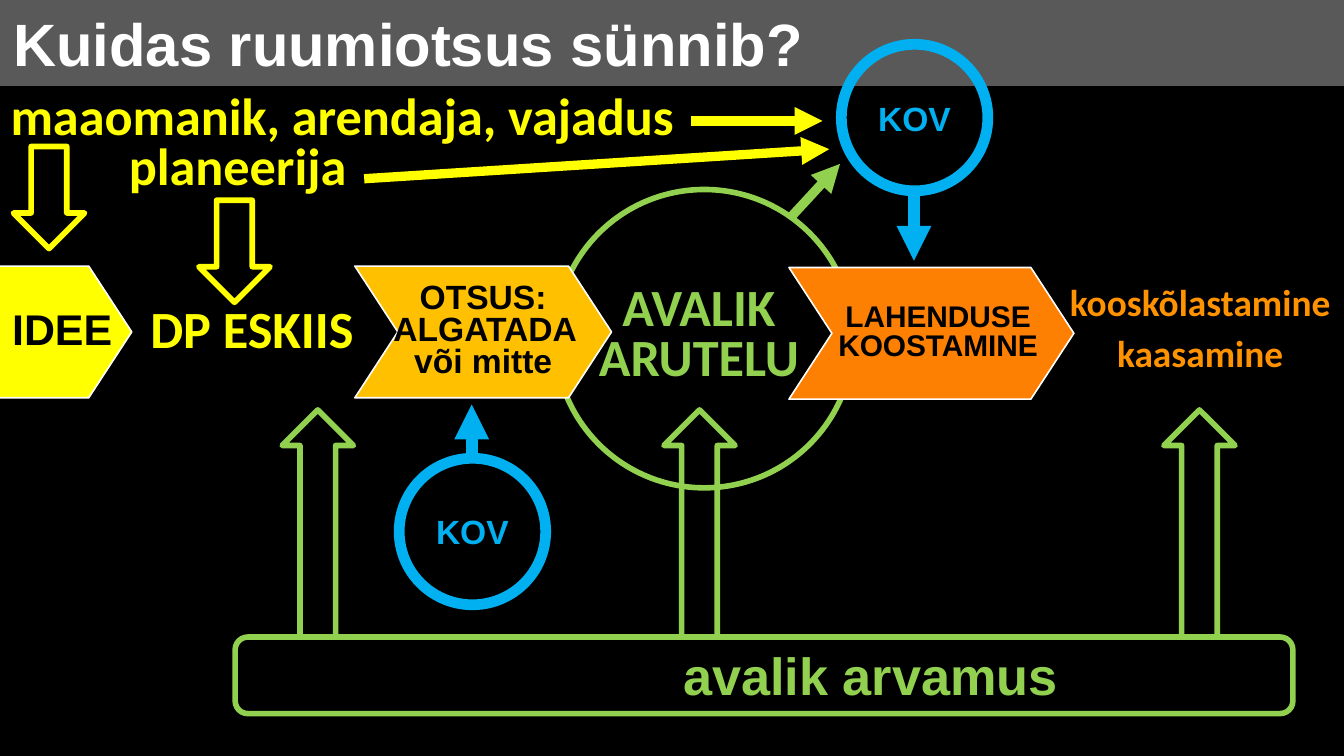
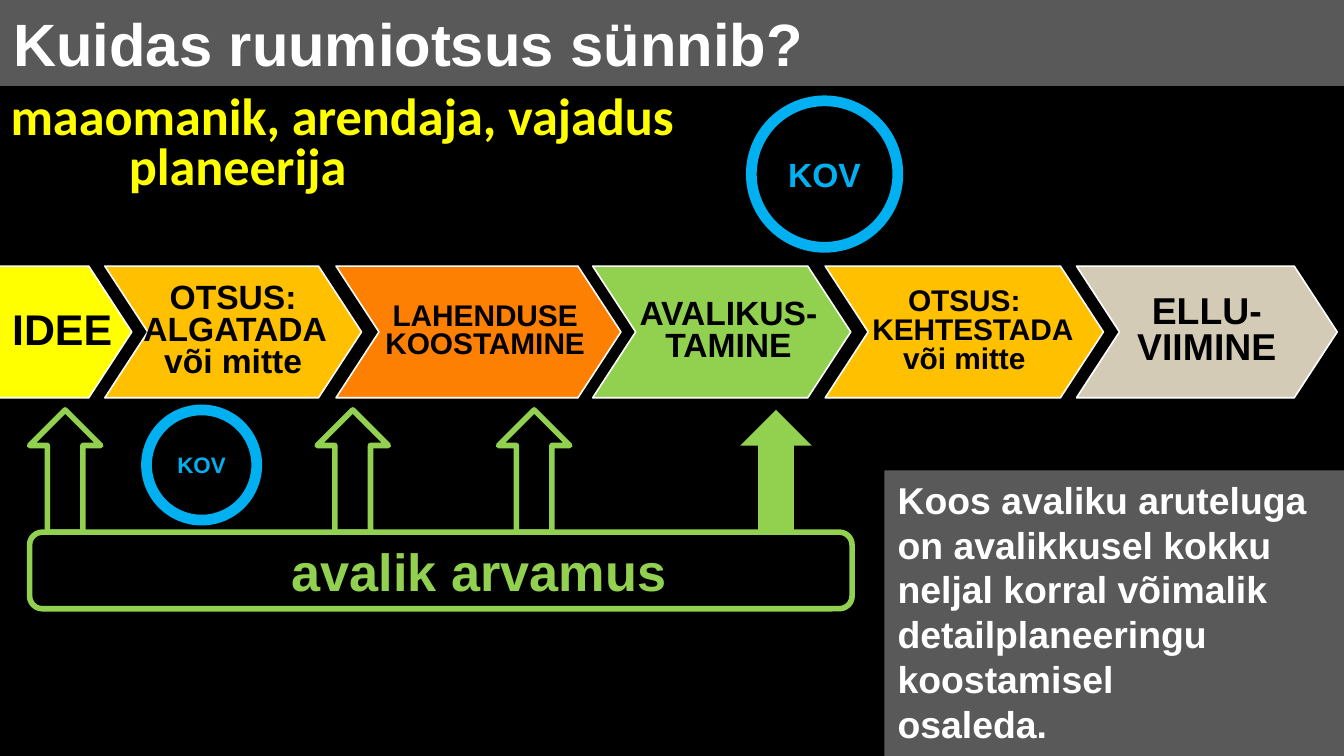
from dataclasses import dataclass

from lxml.etree import SubElement
from pptx import Presentation
from pptx.dml.color import RGBColor
from pptx.enum.shapes import MSO_CONNECTOR, MSO_SHAPE
from pptx.enum.text import MSO_ANCHOR, PP_ALIGN
from pptx.oxml.ns import qn
from pptx.util import Inches, Pt

CELL = Inches(0.1)
COLUMNS, ROWS = 100, 56.25

BLACK, WHITE, GREY = "000000", "FFFFFF", "595959"
YELLOW, GOLD, ORANGE, AMBER = "FFFF00", "FFC000", "FE8002", "FF9201"
GREEN, BLUE, SAND = "92D050", "00B0F0", "D3CBB6"

STEP_TOP, STEP_HEIGHT, STEP_POINT = 19.8, 9.8, 3.2
ARROW_TOP, ARROW_WIDTH = 30.5, 5.3
KOV_SIZE = 10.9
TIGHT_LINES = Pt(27)


@dataclass
class Box:
    left: float
    top: float
    width: float
    height: float

    def share(self, x, y, width, height):
        return Box(self.left + x * self.width, self.top + y * self.height,
                   width * self.width, height * self.height)

    def emu(self):
        return [cells(v) for v in (self.left, self.top, self.width, self.height)]


def cells(count):
    return round(count * CELL)


def color(value):
    return RGBColor.from_string(value)


def paint(shape, fill=None, line=None, weight=3):
    shape.shadow.inherit = False
    if fill:
        shape.fill.solid()
        shape.fill.fore_color.rgb = color(fill)
    else:
        shape.fill.background()
    if line:
        shape.line.color.rgb = color(line)
        shape.line.width = Pt(weight)
    else:
        shape.line.fill.background()


def add_figure(slide, kind, box, **look):
    shape = slide.shapes.add_shape(kind, *box.emu())
    paint(shape, **look)
    return shape


def write_text(shape, lines, size, ink, font="Arial", align=PP_ALIGN.LEFT,
               anchor=MSO_ANCHOR.TOP, spacing=None, indents=(), margins=(1, 0.5)):
    frame = shape.text_frame
    frame.word_wrap = True
    frame.vertical_anchor = anchor
    frame.margin_left = frame.margin_right = cells(margins[0])
    frame.margin_top = frame.margin_bottom = cells(margins[1])
    for index, line in enumerate(lines):
        paragraph = frame.add_paragraph() if index else frame.paragraphs[0]
        paragraph.alignment = align
        if spacing:
            paragraph.line_spacing = spacing
        if index < len(indents) and indents[index]:
            properties = paragraph._p.get_or_add_pPr()
            properties.set("marL", str(cells(indents[index])))
            properties.set("indent", "0")
        run = paragraph.add_run()
        run.text = line
        run.font.name = font
        run.font.size = Pt(size)
        run.font.bold = True
        run.font.color.rgb = color(ink)


def add_label(slide, box, lines, size, ink, **format):
    write_text(slide.shapes.add_textbox(*box.emu()), lines, size, ink, **format)


def add_arrow_line(slide, start, end, ink, weight):
    points = [cells(value) for value in (*start, *end)]
    connector = slide.shapes.add_connector(MSO_CONNECTOR.STRAIGHT, *points)
    connector.line.color.rgb = color(ink)
    connector.line.width = Pt(weight)
    SubElement(connector.line._get_or_add_ln(), qn("a:tailEnd"), type="triangle")
    SubElement(connector._element.spPr, qn("a:effectLst"))


def add_step(slide, box, lines, size, fill, notch=STEP_POINT, align=PP_ALIGN.CENTER,
             spacing=0.8, indents=(), margins=(1.6, 0.3)):
    right, bottom = box.left + box.width, box.top + box.height
    middle = box.top + box.height / 2
    outline = [(box.left, box.top), (right - STEP_POINT, box.top), (right, middle),
               (right - STEP_POINT, bottom), (box.left, bottom)]
    if notch:
        outline.append((box.left + notch, middle))
    points = [(cells(x), cells(y)) for x, y in outline]
    builder = slide.shapes.build_freeform(*points[0])
    builder.add_line_segments(points[1:], close=True)
    shape = builder.convert_to_shape()
    paint(shape, fill=fill, line=WHITE, weight=0.85)
    write_text(shape, lines, size, BLACK, align=align, anchor=MSO_ANCHOR.MIDDLE,
               spacing=spacing, indents=indents, margins=margins)


def step_box(left, width, top=STEP_TOP):
    return Box(left, top, width, STEP_HEIGHT)


def add_idea_step(slide):
    add_step(slide, step_box(-0.1, 9.9), ["IDEE"], 23, YELLOW, notch=0,
             align=PP_ALIGN.LEFT, spacing=0.9, indents=[1], margins=(0, 0.3))


def add_start_step(slide, left):
    add_step(slide, step_box(left, 19.1), ["OTSUS:", "ALGATADA", "või mitte"],
             18, GOLD, indents=[0, 0.3])


def add_solution_step(slide, left, top=STEP_TOP):
    add_step(slide, step_box(left, 21.2, top), ["LAHENDUSE", "KOOSTAMINE"],
             16, ORANGE, indents=[1, 1])


def add_kov(slide, left, top, diameter=KOV_SIZE, size=18):
    shape = add_figure(slide, MSO_SHAPE.OVAL, Box(left, top, diameter, diameter),
                       line=BLUE, weight=5.75)
    write_text(shape, ["KOV"], size, BLUE, align=PP_ALIGN.CENTER,
               anchor=MSO_ANCHOR.MIDDLE)


def add_opinion(slide, box, arrows, solid_arrows=()):
    for offset in (*arrows, *solid_arrows):
        look = {"fill": GREEN} if offset in solid_arrows else {"line": GREEN}
        add_figure(slide, MSO_SHAPE.UP_ARROW,
                   Box(box.left + offset, ARROW_TOP, ARROW_WIDTH, box.top - ARROW_TOP),
                   **look)
    add_label(slide, box.share(0.09, 0, 0.7, 1), ["avalik arvamus"], 28, GREEN,
              align=PP_ALIGN.RIGHT)
    add_figure(slide, MSO_SHAPE.ROUNDED_RECTANGLE, box, line=GREEN)


def add_heading(slide):
    title = add_figure(slide, MSO_SHAPE.RECTANGLE, Box(0, 0, COLUMNS, 6.4), fill=GREY)
    write_text(title, ["Kuidas ruumiotsus sünnib?"], 32, WHITE)
    add_label(slide, Box(-0.2, 6.6, 54.9, 8.7),
              ["maaomanik, arendaja, vajadus", "planeerija"], 28, YELLOW,
              font="Calibri", spacing=TIGHT_LINES, indents=[0, 8.8])


def new_slide(presentation):
    slide = presentation.slides.add_slide(presentation.slide_layouts[6])
    slide.background.fill.solid()
    slide.background.fill.fore_color.rgb = color(BLACK)
    return slide


def build_discussion_slide(presentation):
    slide = new_slide(presentation)
    add_figure(slide, MSO_SHAPE.OVAL, Box(41.3, 14.1, 22.2, 22.2), line=GREEN)
    add_heading(slide)
    add_idea_step(slide)
    add_start_step(slide, 26.4)
    add_solution_step(slide, 58.7, top=19.9)
    add_opinion(slide, Box(17.5, 47.4, 78.7, 5.7), [3.5, 31.9, 69.1])

    for box, lines, size, ink, align in (
        (Box(10.2, 22.5, 19.2, 4.9), ["DP ESKIIS"], 28, YELLOW, PP_ALIGN.LEFT),
        (Box(42.4, 20.8, 19.2, 8.7), ["AVALIK", "ARUTELU"], 28, GREEN, PP_ALIGN.CENTER),
        (Box(78.2, 19.9, 22.2, 8.4), ["kooskõlastamine", "kaasamine"], 20, AMBER,
         PP_ALIGN.CENTER),
    ):
        add_label(slide, box, lines, size, ink, font="Calibri", align=align,
                  spacing=TIGHT_LINES)

    for left, top in ((1, 10.9), (14.8, 14.9)):
        add_figure(slide, MSO_SHAPE.DOWN_ARROW, Box(left, top, ARROW_WIDTH, 7.6),
                   line=YELLOW)

    add_kov(slide, 62.6, 3.3)
    add_kov(slide, 29.7, 34.1)
    for start, end, ink, weight in (
        ((58.9, 16.1), (62.5, 12.2), GREEN, 5),
        ((35.1, 34.1), (35.1, 30.1), BLUE, 6.25),
        ((68, 14.2), (68, 19.4), BLUE, 6.25),
        ((51.4, 9), (61.2, 9), YELLOW, 5),
        ((27.1, 13.3), (61.7, 11.1), YELLOW, 5),
    ):
        add_arrow_line(slide, start, end, ink, weight)


def build_process_slide(presentation):
    slide = new_slide(presentation)
    add_heading(slide)
    add_idea_step(slide)
    add_start_step(slide, 7.8)
    add_solution_step(slide, 25)
    add_step(slide, step_box(44.1, 19.2), ["AVALIKUS-TAMINE"], 18, GREEN, indents=[1])
    add_step(slide, step_box(61.4, 20.7), ["OTSUS:", "KEHTESTADA", "või mitte"],
             16, GOLD, indents=[0, 1.3])
    add_step(slide, step_box(80.1, 19.4), ["ELLU-", "VIIMINE"], 20, SAND)
    add_opinion(slide, Box(2.2, 39.6, 61.2, 5.7), [0, 21.4, 34.9], solid_arrows=[52.9])
    add_kov(slide, 55.9, 7.5)
    add_kov(slide, 10.9, 30.5, diameter=8.2, size=12)
    note = add_figure(slide, MSO_SHAPE.RECTANGLE,
                      Box(65.8, 35, COLUMNS - 65.8, ROWS - 35), fill=GREY)
    write_text(note, ["Koos avaliku aruteluga", "on avalikkusel kokku",
                      "neljal korral võimalik", "detailplaneeringu",
                      "koostamisel", "osaleda."], 20, WHITE)


def main():
    presentation = Presentation()
    presentation.slide_width = cells(COLUMNS)
    presentation.slide_height = cells(ROWS)
    build_discussion_slide(presentation)
    build_process_slide(presentation)
    presentation.save("out.pptx")


if __name__ == "__main__":
    main()
